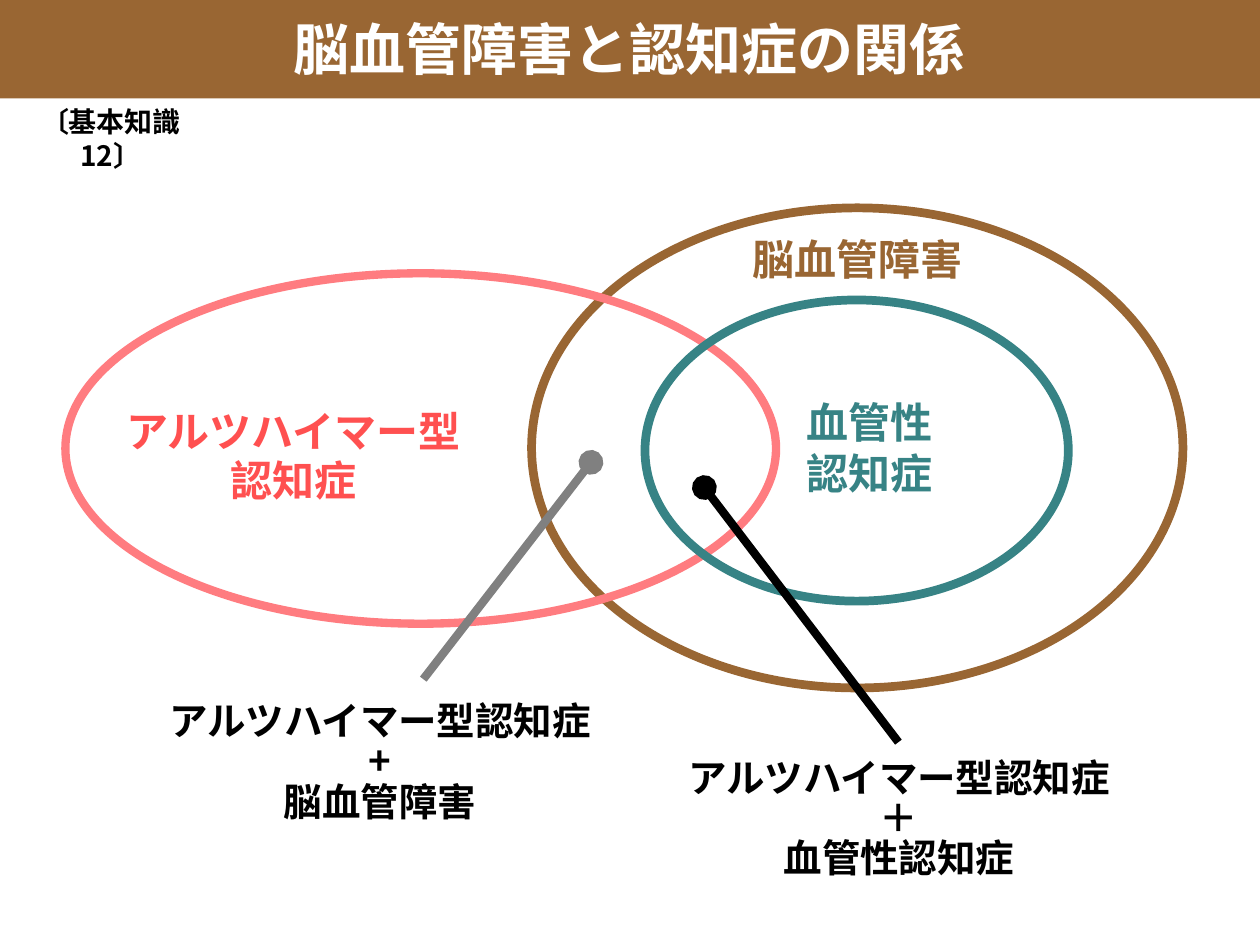
from lxml.etree import SubElement
from pptx import Presentation
from pptx.dml.color import RGBColor
from pptx.enum.shapes import MSO_CONNECTOR, MSO_SHAPE
from pptx.enum.text import PP_ALIGN
from pptx.oxml.ns import qn
from pptx.util import Pt

FONT = "Noto Sans CJK JP"
COLORS = {
    "brown": "996633",
    "pink": "FF7C80",
    "red": "FF5050",
    "teal": "378385",
    "gray": "808080",
    "black": "000000",
    "white": "FFFFFF",
}


def rgb(name):
    return RGBColor.from_string(COLORS[name])


def add_banner(slide, width, height, color):
    sp = slide.shapes.add_shape(MSO_SHAPE.RECTANGLE, 0, 0, Pt(width), Pt(height))
    sp.shadow.inherit = False
    sp.fill.solid()
    sp.fill.fore_color.rgb = rgb(color)
    sp.line.fill.background()


def add_ring(slide, left, top, width, height, color, weight=5):
    sp = slide.shapes.add_shape(MSO_SHAPE.OVAL, Pt(left), Pt(top), Pt(width), Pt(height))
    sp.shadow.inherit = False
    sp.fill.background()
    sp.line.color.rgb = rgb(color)
    sp.line.width = Pt(weight)


def add_pointer(slide, x1, y1, x2, y2, color):
    """Line with a round dot at its start."""
    cxn = slide.shapes.add_connector(MSO_CONNECTOR.STRAIGHT, Pt(x1), Pt(y1), Pt(x2), Pt(y2))
    cxn.line.color.rgb = rgb(color)
    cxn.line.width = Pt(4.75)
    SubElement(cxn.line._get_or_add_ln(), qn("a:headEnd"), type="oval")
    SubElement(cxn._element.spPr, qn("a:effectLst"))


def add_text(slide, text, left, top, width, height, size=24, color="black",
             align=PP_ALIGN.CENTER, spacing=None, before=None, wrap=True):
    """Bold text box with one paragraph for each line of text."""
    sp = slide.shapes.add_textbox(Pt(left), Pt(top), Pt(width), Pt(height))
    tf = sp.text_frame
    tf.word_wrap = wrap
    for i, line in enumerate(text.split("\n")):
        p = tf.add_paragraph() if i else tf.paragraphs[0]
        p.alignment = align
        p.line_spacing = spacing
        p.space_before = before
        r = p.add_run()
        r.text = line
        r.font.name = FONT
        r.font.size = Pt(size)
        r.font.bold = True
        r.font.color.rgb = rgb(color)
        SubElement(r.font._element, qn("a:ea"), typeface=FONT)


def main():
    prs = Presentation()
    prs.slide_width, prs.slide_height = Pt(720), Pt(540)
    slide = prs.slides.add_slide(prs.slide_layouts[6])

    # Overlapping sets
    add_ring(slide, 303.8, 118.8, 372.2, 274.3, "brown")
    add_ring(slide, 37.4, 156.2, 406.1, 200.2, "pink", weight=4.75)
    add_ring(slide, 368.6, 171.4, 241.9, 172.1, "teal")

    # Overlaps, each with its pointer and caption
    add_pointer(slide, 337.7, 264.2, 241.9, 388.1, "gray")
    caption = {"size": 22, "spacing": Pt(23)}
    add_text(slide, "アルツハイマー型認知症\n+\n脳血管障害", 79.2, 398.2, 275.8, 77, **caption)
    add_text(slide, "アルツハイマー型認知症\n＋\n血管性認知症", 375.8, 430.6, 275.8, 77, **caption)
    add_pointer(slide, 402.5, 278.6, 513.4, 424.1, "black")

    # Set names
    tight = {"spacing": 0.8, "before": Pt(4.8)}
    add_text(slide, "脳血管障害", 416.2, 135.4, 147.6, 30.2, color="brown", **tight)
    add_text(slide, "血管性\n認知症", 453.6, 223.2, 126.7, 65.5, color="teal", align=PP_ALIGN.LEFT)
    add_text(slide, "アルツハイマー型\n認知症", 26.6, 234, 282.2, 59.8, color="red", **tight)

    # Title and section tag
    add_banner(slide, 720, 56.2, "brown")
    add_text(slide, "脳血管障害と認知症の関係", 160, 5, 400, 45.4, size=32, color="white", wrap=False)
    add_text(slide, "〔基本知識12〕", 0, 56.2, 126.7, 26.6, size=16)

    prs.save("out.pptx")


if __name__ == "__main__":
    main()
